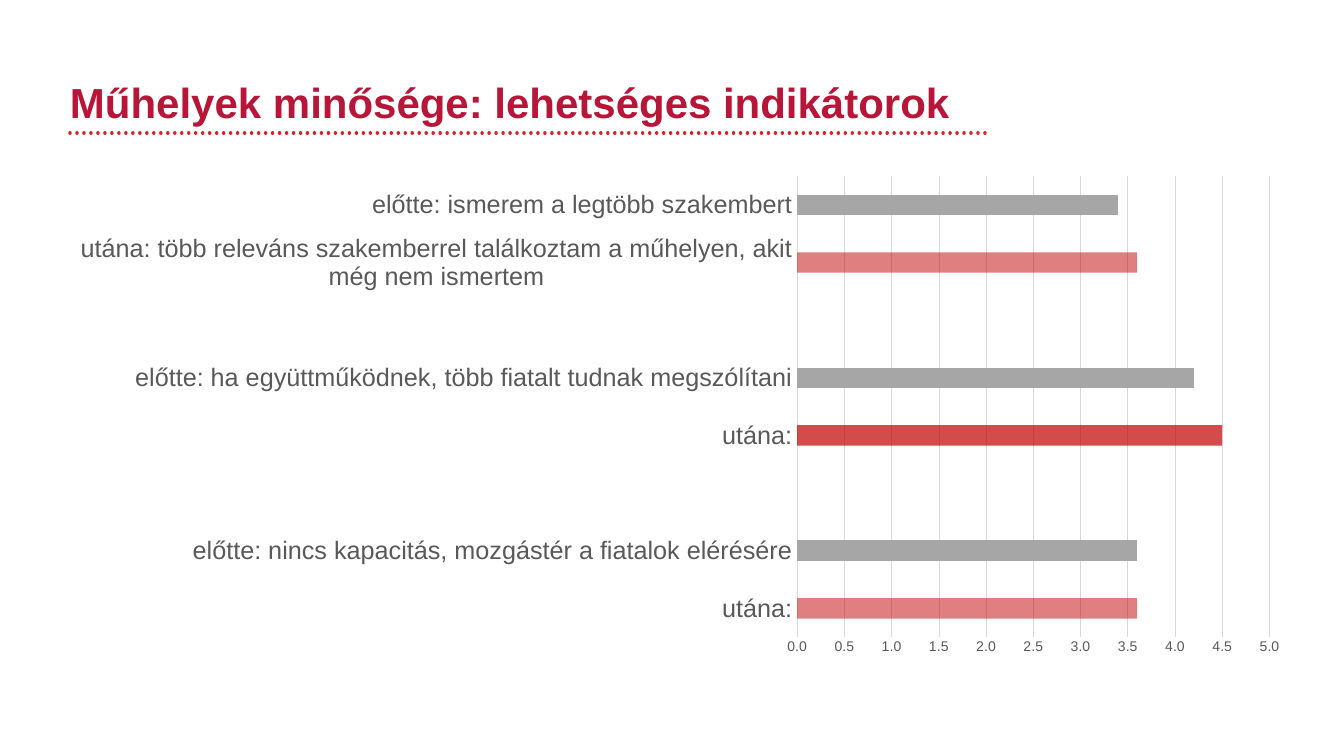
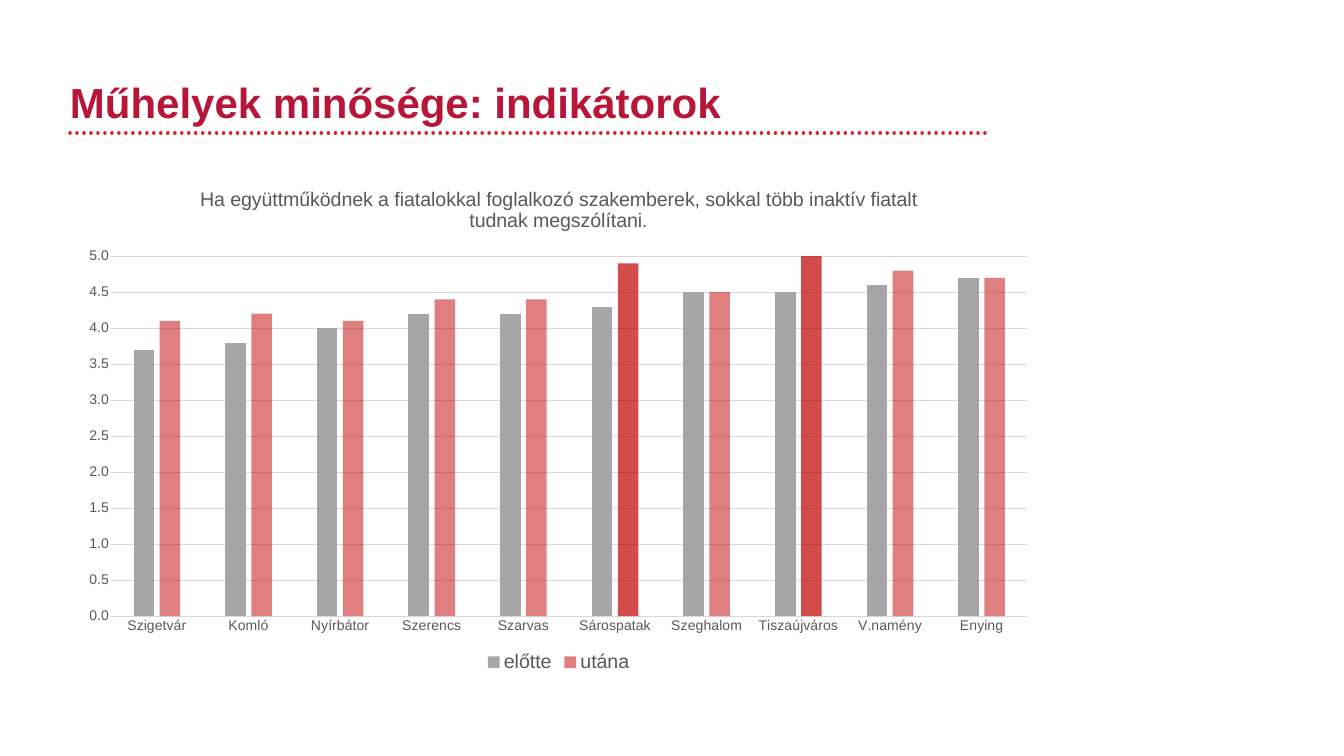
"""Build two slides on workshop quality indicators, each with a title and a bar chart."""
from lxml import etree
from pptx import Presentation
from pptx.chart.data import CategoryChartData
from pptx.dml.color import RGBColor
from pptx.enum.chart import XL_CHART_TYPE, XL_LEGEND_POSITION, XL_TICK_LABEL_POSITION, XL_TICK_MARK
from pptx.enum.dml import MSO_LINE
from pptx.enum.shapes import MSO_CONNECTOR
from pptx.enum.text import MSO_ANCHOR
from pptx.oxml.ns import qn
from pptx.util import Pt

BAR, COLUMN = XL_CHART_TYPE.BAR_CLUSTERED, XL_CHART_TYPE.COLUMN_CLUSTERED
LEGEND_BOTTOM = XL_LEGEND_POSITION.BOTTOM
LABELS_LOW, LABELS_NEXT = XL_TICK_LABEL_POSITION.LOW, XL_TICK_LABEL_POSITION.NEXT_TO_AXIS
NO_TICK = XL_TICK_MARK.NONE
DOTTED = MSO_LINE.ROUND_DOT
STRAIGHT = MSO_CONNECTOR.STRAIGHT
TOP = MSO_ANCHOR.TOP

COLORS = {"title": "B81639", "rule": "D8222C", "text": "595959", "grid": "D9D9D9",
          "before": "A6A6A6", "after": "C00000"}
FONT = "Arial"
EMU_PER_PX = 914400 / 50.4
SLIDE_SIZE = (1344, 756)
TITLE_BOX = (70, 75, 1110, 102)
TITLE_INSET = 2
RULE = (70, 133, 989, 133)
BEFORE, AFTER, STRONG = ("before", 100), ("after", 50), ("after", 70)

SLIDES = [
    {
        "title": "Műhelyek minősége: lehetséges indikátorok",
        "type": BAR,
        "box": (70, 155, 1243, 527),
        "plot": (0.585, 0.04, 0.38, 0.875),
        "categories": [
            "utána:",
            "előtte: nincs kapacitás, mozgástér a fiatalok elérésére",
            "",
            "utána:",
            "előtte: ha együttműködnek, több fiatalt tudnak megszólítani",
            "",
            "utána: több releváns szakemberrel találkoztam a műhelyen, akit még nem ismertem",
            "előtte: ismerem a legtöbb szakembert",
        ],
        "series": [
            ("Series 1", [3.6, 3.6, None, 4.5, 4.2, None, 3.6, 3.4], BEFORE,
             {0: AFTER, 3: STRONG, 6: AFTER}),
        ],
        "category_size": 36,
        "category_labels": LABELS_LOW,
        "spacing": {"gap_width": 182, "overlap": 0},
    },
    {
        "title": "Műhelyek minősége: indikátorok",
        "type": COLUMN,
        "box": (70, 170, 977, 507),
        "plot": (0.042, 0.17, 0.938, 0.71),
        "heading": "Ha együttműködnek a fiatalokkal foglalkozó szakemberek, "
                   "sokkal több inaktív fiatalt tudnak megszólítani.",
        "categories": ["Szigetvár", "Komló", "Nyírbátor", "Szerencs", "Szarvas", "Sárospatak",
                       "Szeghalom", "Tiszaújváros", "V.namény", "Enying"],
        "series": [
            ("előtte", [3.7, 3.8, 4.0, 4.2, 4.2, 4.3, 4.5, 4.5, 4.6, 4.7], BEFORE, {}),
            ("utána", [4.1, 4.2, 4.1, 4.4, 4.4, 4.9, 4.5, 5.0, 4.8, 4.7], AFTER,
             {5: STRONG, 7: STRONG}),
        ],
        "category_size": 20,
        "category_labels": LABELS_NEXT,
        "spacing": {"gap_width": 219, "overlap": -27},
    },
]


def px(*lengths):
    return [round(length * EMU_PER_PX) for length in lengths]


def rgb(name):
    return RGBColor.from_string(COLORS[name])


def set_values(target, values):
    for name, value in values.items():
        setattr(target, name, value)


def style_font(font, size, color="text", bold=False):
    set_values(font, {"name": FONT, "size": Pt(size), "bold": bold})
    font.color.rgb = rgb(color)


def style_line(line, color, width):
    line.color.rgb = rgb(color)
    line.width = Pt(width)


def paint(bar, color, opacity):
    bar.format.fill.solid()
    bar.format.fill.fore_color.rgb = rgb(color)
    if opacity < 100:
        properties = bar.format._element.find(qn("c:spPr"))
        fill_color = properties.find(".//" + qn("a:srgbClr"))
        etree.SubElement(fill_color, qn("a:alpha"), val=str(opacity * 1000))


def place_plot(chart, fractions):
    area = chart._chartSpace.find(".//" + qn("c:plotArea"))
    for old_layout in area.findall(qn("c:layout")):
        area.remove(old_layout)
    layout = etree.Element(qn("c:layout"))
    area.insert(0, layout)
    manual = etree.SubElement(layout, qn("c:manualLayout"))
    settings = [("layoutTarget", "inner"), ("xMode", "edge"), ("yMode", "edge")]
    for tag, value in settings + list(zip("xywh", fractions)):
        etree.SubElement(manual, qn("c:" + tag), val=str(value))


def add_title(slide, text):
    rule = slide.shapes.add_connector(STRAIGHT, *px(*RULE))
    style_line(rule.line, "rule", 5)
    rule.line.dash_style = DOTTED
    rule.line._get_or_add_ln().set("cap", "rnd")
    etree.SubElement(rule._element.spPr, qn("a:effectLst"))

    frame = slide.shapes.add_textbox(*px(*TITLE_BOX)).text_frame
    set_values(frame, {"word_wrap": True, "vertical_anchor": TOP, "margin_left": 0,
                       "margin_right": 0, "margin_bottom": 0,
                       "margin_top": px(TITLE_INSET)[0]})
    run = frame.paragraphs[0].add_run()
    run.text = text
    style_font(run.font, 60, "title", True)


def style_axes(chart, content):
    category, value = chart.category_axis, chart.value_axis
    for axis, size in ((category, content["category_size"]), (value, 20)):
        set_values(axis, {"major_tick_mark": NO_TICK, "minor_tick_mark": NO_TICK})
        style_font(axis.tick_labels.font, size)
    category.tick_label_position = content["category_labels"]
    style_line(category.format.line, "grid", 0.75)
    set_values(value, {"minimum_scale": 0, "maximum_scale": 5, "major_unit": 0.5,
                       "has_major_gridlines": True})
    style_line(value.major_gridlines.format.line, "grid", 0.75)
    value.format.line.fill.background()
    set_values(value.tick_labels, {"number_format": "0.0", "number_format_is_linked": False})


def add_indicator_chart(slide, content):
    data = CategoryChartData(number_format="0.0")
    data.categories = content["categories"]
    for name, values, _, _ in content["series"]:
        data.add_series(name, values)
    chart = slide.shapes.add_chart(content["type"], *px(*content["box"]), data).chart
    chart.font.name = FONT
    chart.font.size = Pt(10)
    style_axes(chart, content)

    plot = chart.plots[0]
    set_values(plot, {"vary_by_categories": False, **content["spacing"]})
    for series, (_, _, look, special_points) in zip(plot.series, content["series"]):
        series.invert_if_negative = False
        paint(series, *look)
        for index, point_look in special_points.items():
            paint(series.points[index], *point_look)

    heading = content.get("heading")
    chart.has_title = chart.has_legend = bool(heading)
    if heading:
        run = chart.chart_title.text_frame.paragraphs[0].add_run()
        run.text = heading
        style_font(run.font, 28)
        chart.chart_title.include_in_layout = False
        set_values(chart.legend, {"position": LEGEND_BOTTOM, "include_in_layout": False})
        style_font(chart.legend.font, 28)
    place_plot(chart, content["plot"])


def main():
    presentation = Presentation()
    presentation.slide_width, presentation.slide_height = px(*SLIDE_SIZE)
    for content in SLIDES:
        slide = presentation.slides.add_slide(presentation.slide_layouts[6])
        add_title(slide, content["title"])
        add_indicator_chart(slide, content)
    presentation.save("out.pptx")


if __name__ == "__main__":
    main()
